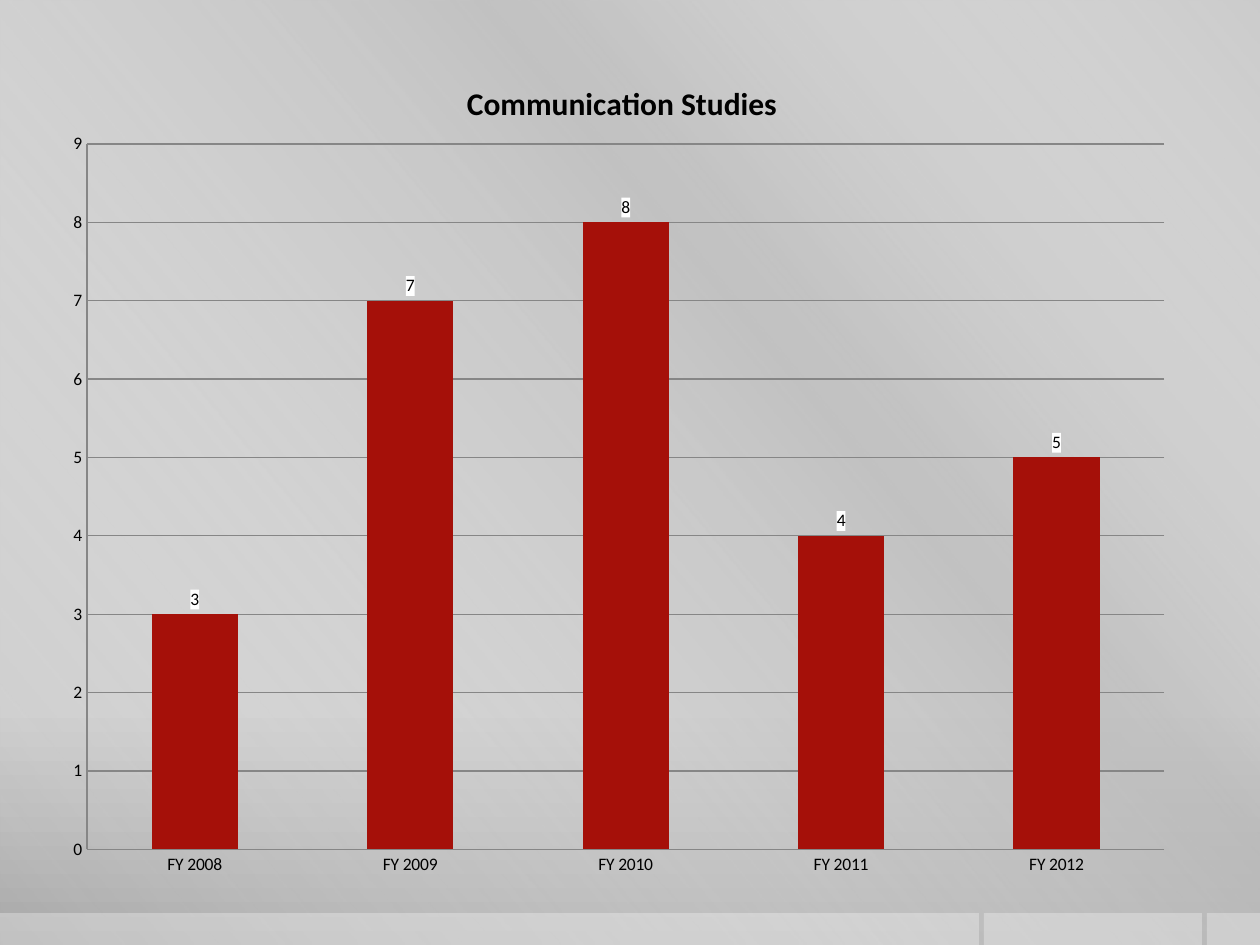
from lxml import etree
from pptx import Presentation
from pptx.chart.data import CategoryChartData
from pptx.dml.color import RGBColor
from pptx.enum.chart import XL_CHART_TYPE, XL_LABEL_POSITION, XL_TICK_MARK
from pptx.enum.shapes import MSO_SHAPE
from pptx.oxml import parse_xml
from pptx.oxml.ns import nsdecls, qn
from pptx.util import Pt

COLUMN = XL_CHART_TYPE.COLUMN_CLUSTERED
OUTER = XL_LABEL_POSITION.OUTSIDE_END
NO_TICK = XL_TICK_MARK.NONE
RECT = MSO_SHAPE.RECTANGLE
FONT = "Calibri"
BLACK, WHITE, GRAY, RED = "000000", "FFFFFF", "868686", "A51009"
WIDE, HIGH = 1260, 945


def px(count):
    return round(count * 914400 / 126)


def rgb(code):
    return RGBColor.from_string(code)


def style(font, size, bold=False):
    font.name = FONT
    font.size = Pt(size)
    font.bold = bold
    font.color.rgb = rgb(BLACK)


def fade(solid, stops, angle):
    marks = "".join(
        f'<a:gs pos="{pos * 1000}"><a:srgbClr val="{code}">'
        f'<a:alpha val="{alpha * 1000}"/></a:srgbClr></a:gs>'
        for pos, code, alpha in stops
    )
    grad = parse_xml(
        f'<a:gradFill {nsdecls("a")} rotWithShape="1"><a:gsLst>{marks}</a:gsLst>'
        f'<a:lin ang="{angle * 60000}" scaled="0"/></a:gradFill>'
    )
    solid.getparent().replace(solid, grad)


def add_rect(slide, left, top, width, height, alpha=100):
    rect = slide.shapes.add_shape(RECT, px(left), px(top), px(width), px(height))
    rect.shadow.inherit = False
    rect.line.fill.background()
    rect.fill.solid()
    rect.fill.fore_color.rgb = rgb(WHITE)
    solid = rect.element.spPr.find(qn("a:solidFill"))
    if alpha < 100:
        etree.SubElement(solid[0], qn("a:alpha")).set("val", str(alpha * 1000))
    return solid


def add_back(slide):
    fill = slide.background.fill
    fill.solid()
    fill.fore_color.rgb = rgb(WHITE)
    solid = slide.element.xpath(".//p:bgPr/a:solidFill")[0]
    fade(solid, [(0, "CBCBCB", 100), (76, "C8C8C8", 100), (100, "A7A7A7", 100)], 90)
    sheen = add_rect(slide, 0, 0, WIDE, HIGH)
    fade(sheen, [(0, WHITE, 0), (34, "BFBFBF", 61),
                 (38, "BFBFBF", 76), (100, WHITE, 0)], 140)
    for left, right in ((1207, WIDE), (984, 1202), (0, 979)):
        add_rect(slide, left, 913, right - left, 32, 30)


def place(owner, index, **spots):
    for old in owner.findall(qn("c:layout")):
        owner.remove(old)
    layout = etree.Element(qn("c:layout"))
    manual = etree.SubElement(layout, qn("c:manualLayout"))
    if "w" in spots:
        etree.SubElement(manual, qn("c:layoutTarget")).set("val", "inner")
    for key in "xy":
        etree.SubElement(manual, qn(f"c:{key}Mode")).set("val", "edge")
    for key, spot in spots.items():
        etree.SubElement(manual, qn(f"c:{key}")).set("val", str(spot))
    owner.insert(index, layout)


def set_axis(axis):
    axis.major_tick_mark = axis.minor_tick_mark = NO_TICK
    axis.format.line.color.rgb = rgb(GRAY)
    axis.format.line.width = Pt(0.75)
    style(axis.tick_labels.font, 10)


def set_title(chart, text):
    chart.has_title = True
    title = chart.chart_title
    run = title.text_frame.paragraphs[0].add_run()
    run.text = text
    style(run.font, 18, True)
    title.include_in_layout = False
    place(title._element, 1, x=0.36, y=0.04)


def set_bars(plot):
    plot.gap_width = 150
    plot.vary_by_categories = False
    bars = plot.series[0]
    bars.format.fill.solid()
    bars.format.fill.fore_color.rgb = rgb(RED)
    labels = bars.data_labels
    labels.show_value = True
    labels.position = OUTER
    style(labels.font, 10)
    box = parse_xml(
        f'<c:spPr {nsdecls("c", "a")}><a:solidFill>'
        f'<a:srgbClr val="{WHITE}"/></a:solidFill></c:spPr>'
    )
    labels._element.find(qn("c:txPr")).addprevious(box)


def add_bars(slide):
    data = CategoryChartData()
    data.categories = [f"FY {year}" for year in range(2008, 2013)]
    data.add_series("Series 1", (3, 7, 8, 4, 5))
    frame = slide.shapes.add_chart(COLUMN, px(53), px(42), px(1134), px(850), data)
    chart = frame.chart
    chart.has_legend = False
    style(chart.font, 10)
    set_title(chart, "Communication Studies")
    set_axis(chart.category_axis)
    scale = chart.value_axis
    set_axis(scale)
    scale.minimum_scale, scale.maximum_scale, scale.major_unit = 0, 9, 1
    scale.has_major_gridlines = True
    grid = scale.major_gridlines.format.line
    grid.color.rgb = rgb(GRAY)
    grid.width = Pt(0.75)
    set_bars(chart.plots[0])
    area = chart._chartSpace.find(f".//{qn('c:plotArea')}")
    place(area, 0, x=0.03, y=0.12, w=0.95, h=0.83)


def main():
    deck = Presentation()
    deck.slide_width, deck.slide_height = px(WIDE), px(HIGH)
    slide = deck.slides.add_slide(deck.slide_layouts[6])
    add_back(slide)
    add_bars(slide)
    deck.save("out.pptx")


if __name__ == "__main__":
    main()
